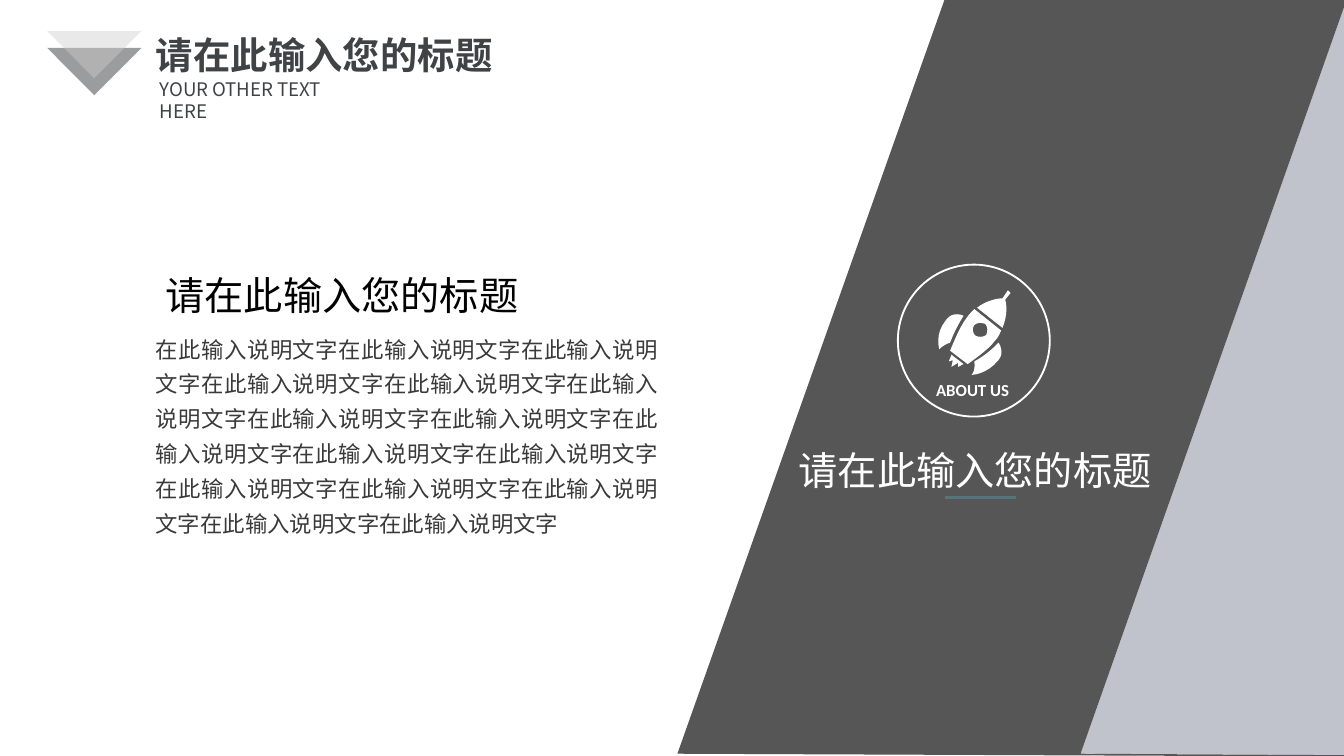
from collections import namedtuple

from lxml.etree import SubElement
from pptx import Presentation
from pptx.dml.color import RGBColor
from pptx.enum.shapes import MSO_CONNECTOR, MSO_SHAPE
from pptx.enum.text import MSO_ANCHOR, MSO_AUTO_SIZE, PP_ALIGN
from pptx.oxml.ns import qn
from pptx.util import Pt

WHITE = RGBColor(0xFF, 0xFF, 0xFF)
BLACK = RGBColor(0x00, 0x00, 0x00)
INK = RGBColor(0x19, 0x1A, 0x1E)
SILVER = RGBColor(0xD0, 0xCE, 0xCE)
TITLE_GREY = RGBColor(0x3F, 0x43, 0x46)
BODY_GREY = RGBColor(0x3A, 0x3A, 0x3A)
PANEL_GREY = RGBColor(0x56, 0x56, 0x56)
PANEL_BLUE = RGBColor(0xC0, 0xC2, 0xCC)
TEAL = RGBColor(0x58, 0x74, 0x79)

HAN_FONT = "Noto Sans CJK SC"
LATIN_FONT = "Calibri"
HEADING = "请在此输入您的标题"
DESCRIPTION = "在此输入说明文字" * 16

Box = namedtuple("Box", "left top width height")

# Contours on a 57-unit-wide grid: a pair is a corner, six numbers a Bezier curve.
ROCKET_WIDTH = 57
ROCKET = [
    # right fin
    [(28, 63), (28, 63, 31, 60, 30, 53), (41, 47, 48, 39, 48, 39),
     (48, 39, 53, 46, 48, 52), (39, 63, 28, 63, 28, 63)],
    # hull
    [(12, 45), (12, 45, 19, 27, 24, 21), (26, 18, 28, 16, 30, 14), (50, 30),
     (49, 32, 48, 35, 45, 38), (41, 44, 25, 55, 25, 55)],
    # window
    [(38, 25), (35, 24, 32, 24, 30, 26), (28, 29, 29, 32, 31, 34),
     (34, 35, 37, 35, 39, 33), (40, 30, 40, 27, 38, 25)],
    # nose
    [(51, 6), (55, 0), (57, 2), (53, 7), (54, 10, 55, 18, 51, 28), (32, 13),
     (40, 7, 48, 6, 51, 6)],
    # left fin
    [(4, 44), (4, 44, 0, 33, 9, 22), (14, 15, 22, 19, 22, 19),
     (22, 19, 16, 28, 12, 39), (6, 41, 4, 44, 4, 44)],
    # flame
    [(18, 57), (18, 54), (13, 57), (14, 52), (11, 53), (13, 48), (22, 55)],
]


def flatten(contour, steps=8):
    """Turn the curves of a contour into short straight pieces."""
    points = []
    for segment in contour:
        if len(segment) == 2:
            points.append(segment)
            continue
        controls = [points[-1], segment[:2], segment[2:4], segment[4:]]
        for step in range(1, steps + 1):
            t = step / steps
            weights = ((1 - t) ** 3, 3 * t * (1 - t) ** 2, 3 * t * t * (1 - t), t ** 3)
            points.append(tuple(
                sum(w * p[axis] for w, p in zip(weights, controls)) for axis in (0, 1)))
    return points


def add_outline(slide, box, contours, color, unit=1, opacity=None):
    """Fill closed contours, measured in units from the corner of the box."""
    builder = None
    for contour in contours:
        start, *rest = [(Pt(box.left + x * unit), Pt(box.top + y * unit)) for x, y in contour]
        if builder is None:
            builder = slide.shapes.build_freeform(*start)
        else:
            builder.move_to(*start)
        builder.add_line_segments(rest, close=True)
    outline = builder.convert_to_shape()
    outline.shadow.inherit = False
    outline.fill.solid()
    outline.fill.fore_color.rgb = color
    outline.line.fill.background()
    if opacity is not None:
        rgb = outline.fill._xPr.find(".//" + qn("a:srgbClr"))
        SubElement(rgb, qn("a:alpha"), val=str(opacity * 1000))


def write(holder, box, text, size, color, font=HAN_FONT, bold=False,
          align=PP_ALIGN.LEFT, spacing=1.0, wrap=True):
    for name, value in box._asdict().items():
        setattr(holder, name, Pt(value))
    frame = holder.text_frame
    frame.text = text
    paragraph = frame.paragraphs[0]
    run = paragraph.runs[0]
    run.font.color.rgb = color
    formats = (
        (frame, {"word_wrap": wrap, "auto_size": MSO_AUTO_SIZE.NONE,
                 "vertical_anchor": MSO_ANCHOR.TOP}),
        (paragraph, {"alignment": align, "line_spacing": spacing}),
        (run.font, {"name": font, "size": Pt(size), "bold": bold}),
    )
    for target, values in formats:
        for name, value in values.items():
            setattr(target, name, value)
    SubElement(run._r.get_or_add_rPr(), qn("a:ea"), typeface=font)


def add_text(slide, box, text, size, color, **formats):
    write(slide.shapes.add_textbox(0, 0, 0, 0), box, text, size, color, **formats)


def add_header(slide, box):
    triangle = [(0, 0), (50.6, 0), (25.3, 25.3)]
    for drop, color in ((9, INK), (0, SILVER)):
        add_outline(slide, Box(box.left, box.top + drop, 50.6, 25.3),
                    [triangle], color, opacity=43)
    write(slide.shapes.title, Box(box.left + 51.1, box.top - 2.9, 195.1, 31),
          HEADING, 20, TITLE_GREY, bold=True, wrap=False)
    add_text(slide, Box(box.left + 53.3, box.top + 21.6, 114.5, 19.4),
             "YOUR OTHER TEXT HERE", 10, TITLE_GREY)


def add_panels(slide, box):
    """Place the slanted bands, which bleed slightly past the right edge."""
    right, bottom = box.width, box.height
    fold_top, fold_bottom = (right - 2.9, 0), (right - 145.4, bottom - 0.8)
    add_outline(slide, box, [[fold_top, (right, 0), (right, bottom), fold_bottom]], PANEL_BLUE)
    add_outline(slide, box, [[(143.3, -0.7), fold_top, fold_bottom, (right, bottom),
                              (right, bottom + 0.7), (0, bottom - 0.8)]], PANEL_GREY)


def add_badge(slide, box):
    ring = slide.shapes.add_shape(MSO_SHAPE.OVAL, *(Pt(length) for length in box))
    ring.shadow.inherit = False
    ring.fill.background()
    ring.line.color.rgb = WHITE
    ring.line.width = Pt(1)
    add_text(slide, Box(box.left + 13, box.top + 58.3, 54, 18), "ABOUT US", 9, WHITE,
             font=LATIN_FONT, bold=True, align=PP_ALIGN.CENTER)
    rocket = Box(box.left + 19.4, box.top + 13.7, 41, 45.4)
    add_outline(slide, rocket, [flatten(contour) for contour in ROCKET], WHITE,
                unit=rocket.width / ROCKET_WIDTH)


def add_panel_heading(slide, box):
    add_text(slide, box, HEADING, 21, WHITE, align=PP_ALIGN.CENTER)
    left, y = box.left + 113, box.top + 31
    underline = slide.shapes.add_connector(
        MSO_CONNECTOR.STRAIGHT, Pt(left), Pt(y), Pt(left + 38.2), Pt(y))
    underline.line.color.rgb = TEAL
    underline.line.width = Pt(1.75)
    SubElement(underline._element.spPr, qn("a:effectLst"))


def add_description(slide, box):
    add_text(slide, Box(box.left, box.top + 30.2, box.width, box.height - 30.2),
             DESCRIPTION, 12, BODY_GREY, align=PP_ALIGN.JUSTIFY, spacing=1.3)
    add_text(slide, Box(box.left, box.top, 213.8, 32.4),
             HEADING, 21, BLACK, align=PP_ALIGN.CENTER)


def main():
    deck = Presentation()
    deck.slide_width, deck.slide_height = Pt(720), Pt(405)
    slide = deck.slides.add_slide(deck.slide_layouts[5])
    add_header(slide, Box(25.2, 16.6, 246, 41))
    add_panels(slide, Box(362.9, 0, 361.4, 404.6))
    add_badge(slide, Box(481, 141.8, 81.4, 81.4))
    add_panel_heading(slide, Box(393.1, 235.4, 258.5, 32.4))
    add_description(slide, Box(76.3, 141.8, 283.7, 149.7))
    deck.save("out.pptx")


if __name__ == "__main__":
    main()
